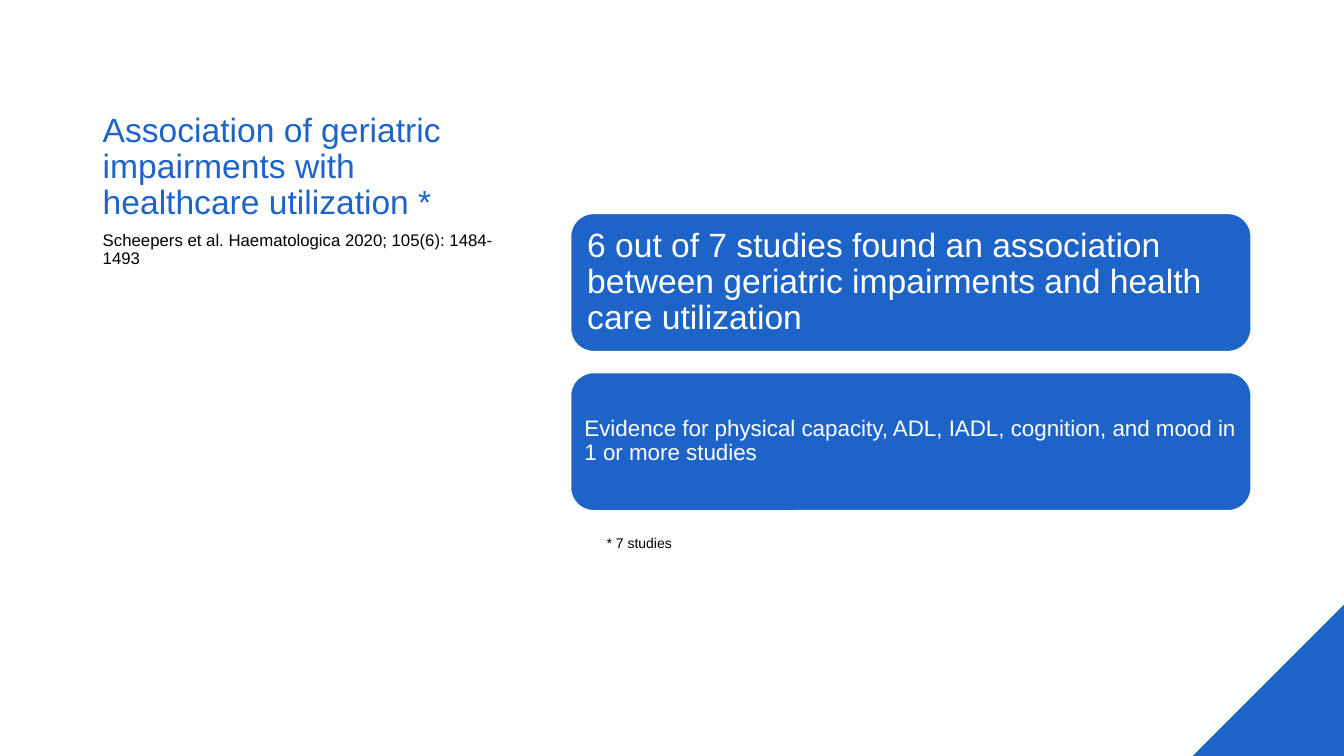
from pptx import Presentation
from pptx.dml.color import RGBColor
from pptx.enum.shapes import MSO_SHAPE as Preset
from pptx.enum.text import MSO_ANCHOR as Anchor, PP_ALIGN as Align
from pptx.util import Cm, Pt

BLUE = RGBColor(0x1E, 0x64, 0xC8)
WHITE = RGBColor(0xFF, 0xFF, 0xFF)
BLACK = RGBColor(0x00, 0x00, 0x00)

LEFT_COLUMN = 2.34
COLUMN_WIDTH = 10.92
TITLE_TOP, TITLE_HEIGHT = 1.27, 4.45
CARD_LEFT, CARD_TOP = 14.38, 5.38
CARD_WIDTH, CARD_HEIGHT = 17.15, 3.48
CARD_STEP = 4.01
CORNER = 3.81

FINDINGS = [  # text, size in points, inset in cm
    ("6 out of 7 studies found an association between geriatric impairments "
     "and health care utilization", 24, 0.25),
    ("Evidence for physical capacity, ADL, IADL, cognition, and mood in "
     "1 or more studies", 16, 0.18),
]


def set_values(target, values):
    for name, value in values.items():
        setattr(target, name, value)


class SlideBuilder:
    font = "Arial"

    def __init__(self, deck):
        self.deck = deck
        self.page = deck.slides.add_slide(deck.slide_layouts[6])

    def fill_text(self, shape, text, size, color, frame=None, spacing=None):
        """Fill a shape with one left-aligned paragraph."""
        set_values(shape.text_frame, {"word_wrap": True, **(frame or {})})
        para = shape.text_frame.paragraphs[0]
        set_values(para, {"alignment": Align.LEFT, **(spacing or {})})
        span = para.add_run()
        span.text = text
        set_values(span.font, {"name": self.font, "size": Pt(size)})
        span.font.color.rgb = color

    def text_box(self, left, top, width, height, text, size, color, **layout):
        box = self.page.shapes.add_textbox(Cm(left), Cm(top), Cm(width), Cm(height))
        self.fill_text(box, text, size, color, **layout)

    def blue_shape(self, preset, left, top, width, height):
        shape = self.page.shapes.add_shape(
            preset, Cm(left), Cm(top), Cm(width), Cm(height))
        shape.shadow.inherit = False
        shape.fill.solid()
        shape.fill.fore_color.rgb = BLUE
        shape.line.fill.background()
        return shape

    def card(self, top, text, size, inset):
        card = self.blue_shape(Preset.ROUNDED_RECTANGLE, CARD_LEFT, top,
                               CARD_WIDTH, CARD_HEIGHT)
        card.line.color.rgb = WHITE
        card.line.width = Pt(1)
        sides = ("left", "top", "right", "bottom")
        frame = {f"margin_{side}": Cm(inset) for side in sides}
        self.fill_text(card, text, size, WHITE,
                       frame={**frame, "vertical_anchor": Anchor.MIDDLE},
                       spacing={"line_spacing": 0.9})

    def corner_triangle(self):
        triangle = self.blue_shape(
            Preset.RIGHT_TRIANGLE, self.deck.slide_width.cm - CORNER,
            self.deck.slide_height.cm - CORNER, CORNER, CORNER)
        triangle._element.spPr.xfrm.set("flipH", "1")


def main():
    deck = Presentation()
    set_values(deck, {"slide_width": Cm(33.87), "slide_height": Cm(19.05)})
    slide = SlideBuilder(deck)

    slide.corner_triangle()
    slide.text_box(LEFT_COLUMN, TITLE_TOP, COLUMN_WIDTH, TITLE_HEIGHT,
                   "Association of geriatric impairments with healthcare utilization *",
                   24, BLUE, frame={"vertical_anchor": Anchor.BOTTOM},
                   spacing={"line_spacing": 0.9})
    slide.text_box(LEFT_COLUMN, TITLE_TOP + TITLE_HEIGHT, COLUMN_WIDTH, 10.59,
                   "Scheepers et al. Haematologica 2020; 105(6): 1484-1493",
                   12, BLACK, spacing={"line_spacing": 0.9, "space_before": Pt(7.5)})
    for index, (text, size, inset) in enumerate(FINDINGS):
        slide.card(CARD_TOP + index * CARD_STEP, text, size, inset)
    slide.text_box(15.04, 13.34, 6.55, 0.69, "* 7 studies", 10, BLACK)

    deck.save("out.pptx")


if __name__ == "__main__":
    main()
